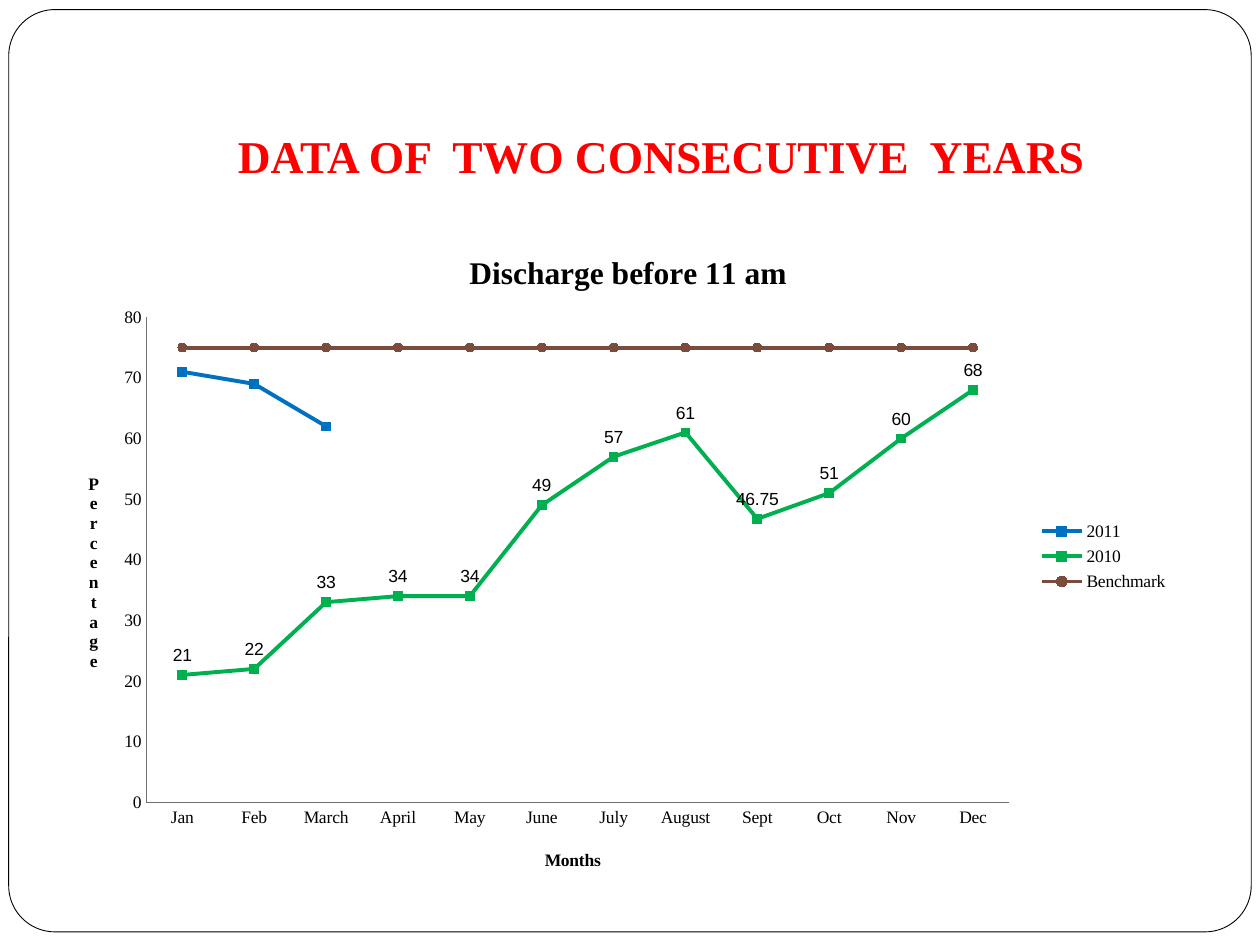
from lxml import etree
from pptx import Presentation
from pptx.chart.data import CategoryChartData
from pptx.dml.color import RGBColor
from pptx.enum.chart import (XL_CHART_TYPE, XL_LABEL_POSITION, XL_LEGEND_POSITION,
                             XL_MARKER_STYLE, XL_TICK_MARK)
from pptx.enum.shapes import MSO_SHAPE
from pptx.enum.text import MSO_ANCHOR, PP_ALIGN
from pptx.oxml.ns import qn
from pptx.util import Pt

BLACK = RGBColor(0x00, 0x00, 0x00)
WHITE = RGBColor(0xFF, 0xFF, 0xFF)
RED = RGBColor(0xFF, 0x00, 0x00)
BLUE = RGBColor(0x00, 0x70, 0xC0)
GREEN = RGBColor(0x00, 0xB0, 0x50)
BROWN = RGBColor(0x7B, 0x4C, 0x3C)
GRAY = RGBColor(0x70, 0x70, 0x70)
FONT = "Times New Roman"

MONTHS = ["Jan", "Feb", "March", "April", "May", "June",
          "July", "August", "Sept", "Oct", "Nov", "Dec"]
SERIES = [
    ("2011", [71, 69, 62] + [None] * 9, BLUE, XL_MARKER_STYLE.SQUARE),
    ("2010", [21, 22, 33, 34, 34, 49, 57, 61, 46.75, 51, 60, 68],
     GREEN, XL_MARKER_STYLE.SQUARE),
    ("Benchmark", [75] * 12, BROWN, XL_MARKER_STYLE.CIRCLE),
]


def format_font(font, size=10, color=BLACK, bold=False, name=FONT):
    font.name, font.size, font.bold = name, Pt(size), bold
    font.color.rgb = color


def write_text(text_frame, text, align=PP_ALIGN.CENTER, **font_format):
    paragraph = text_frame.paragraphs[0]
    paragraph.alignment = align
    run = paragraph.add_run()
    run.text = text
    format_font(run.font, **font_format)


def set_layout(element, index, inner=False, **fractions):
    """Place a chart part by fractions (x, y, w, h) of the chart area."""
    for old in element.findall(qn("c:layout")):
        element.remove(old)
    layout = etree.Element(qn("c:layout"))
    manual = etree.SubElement(layout, qn("c:manualLayout"))
    values = {"layoutTarget": "inner"} if inner else {}
    values.update(xMode="edge", yMode="edge", **fractions)
    for tag, value in values.items():
        etree.SubElement(manual, qn(f"c:{tag}")).set("val", str(value))
    element.insert(index, layout)


def add_frame(slide, left, top, width, height):
    frame = slide.shapes.add_shape(MSO_SHAPE.ROUNDED_RECTANGLE, left, top, width, height)
    frame.adjustments[0] = 0.05
    frame.shadow.inherit = False
    frame.fill.solid()
    frame.fill.fore_color.rgb = WHITE
    frame.line.color.rgb = BLACK
    frame.line.width = Pt(0.5)


def add_title(slide, left, top, width, height):
    text_frame = slide.shapes.add_textbox(left, top, width, height).text_frame
    text_frame.word_wrap = True
    text_frame.vertical_anchor = MSO_ANCHOR.BOTTOM
    text_frame.margin_bottom = Pt(7.2)
    write_text(text_frame, "DATA OF  TWO CONSECUTIVE  YEARS", size=26, color=RED, bold=True)


def style_series(series, color, marker_style):
    series.smooth = False
    series.format.line.color.rgb = color
    series.format.line.width = Pt(2.25)
    marker = series.marker
    marker.style, marker.size = marker_style, 5
    marker.format.fill.solid()
    marker.format.fill.fore_color.rgb = color
    marker.format.line.color.rgb = color


def style_axis(axis, title, x, y):
    axis.has_major_gridlines = False
    axis.major_tick_mark = axis.minor_tick_mark = XL_TICK_MARK.NONE
    axis.format.line.color.rgb = GRAY
    format_font(axis.tick_labels.font)
    write_text(axis.axis_title.text_frame, title, bold=True)
    set_layout(axis.axis_title._element, 1, x=x, y=y)


def add_discharge_chart(slide, left, top, width, height):
    data = CategoryChartData()
    data.categories = MONTHS
    for name, values, _, _ in SERIES:
        data.add_series(name, values)
    chart = slide.shapes.add_chart(
        XL_CHART_TYPE.LINE_MARKERS, left, top, width, height, data).chart
    format_font(chart.font)

    # Chart title
    write_text(chart.chart_title.text_frame, "Discharge before 11 am", size=18, bold=True)
    set_layout(chart.chart_title._element, 1, x=0.36, y=0.04)

    # Axes, with the value title stacked letter by letter
    style_axis(chart.category_axis, "Months", x=0.43, y=0.93)
    value_axis = chart.value_axis
    style_axis(value_axis, "Percentage", x=0.02, y=0.37)
    value_axis.minimum_scale, value_axis.maximum_scale = 0, 80
    value_axis.major_unit = 10
    body = value_axis.axis_title._element.find(".//" + qn("a:bodyPr"))
    body.set("rot", "0")
    body.set("vert", "wordArtVert")

    # Lines and value labels
    plot = chart.plots[0]
    plot.vary_by_categories = False
    for series, (_, _, color, marker_style) in zip(plot.series, SERIES):
        style_series(series, color, marker_style)
    labels = plot.series[1].data_labels
    labels.show_value = True
    labels.position = XL_LABEL_POSITION.ABOVE
    format_font(labels.font, name="Arial")

    # Legend and plot area
    chart.has_legend = True
    chart.legend.position = XL_LEGEND_POSITION.RIGHT
    chart.legend.include_in_layout = False
    format_font(chart.legend.font)
    set_layout(chart.legend._element, 1, x=0.87, y=0.44, w=0.13, h=0.12)
    plot_area = chart._chartSpace.find(".//" + qn("c:plotArea"))
    set_layout(plot_area, 0, inner=True, x=0.075, y=0.144, w=0.775, h=0.722)


def main():
    presentation = Presentation()
    presentation.slide_width, presentation.slide_height = Pt(720), Pt(540)
    slide = presentation.slides.add_slide(presentation.slide_layouts[6])
    add_frame(slide, Pt(5), Pt(5.5), Pt(710), Pt(527))
    add_title(slide, Pt(72), Pt(21.6), Pt(612), Pt(90))
    add_discharge_chart(slide, Pt(36), Pt(126), Pt(636), Pt(384))
    presentation.save("out.pptx")


if __name__ == "__main__":
    main()
